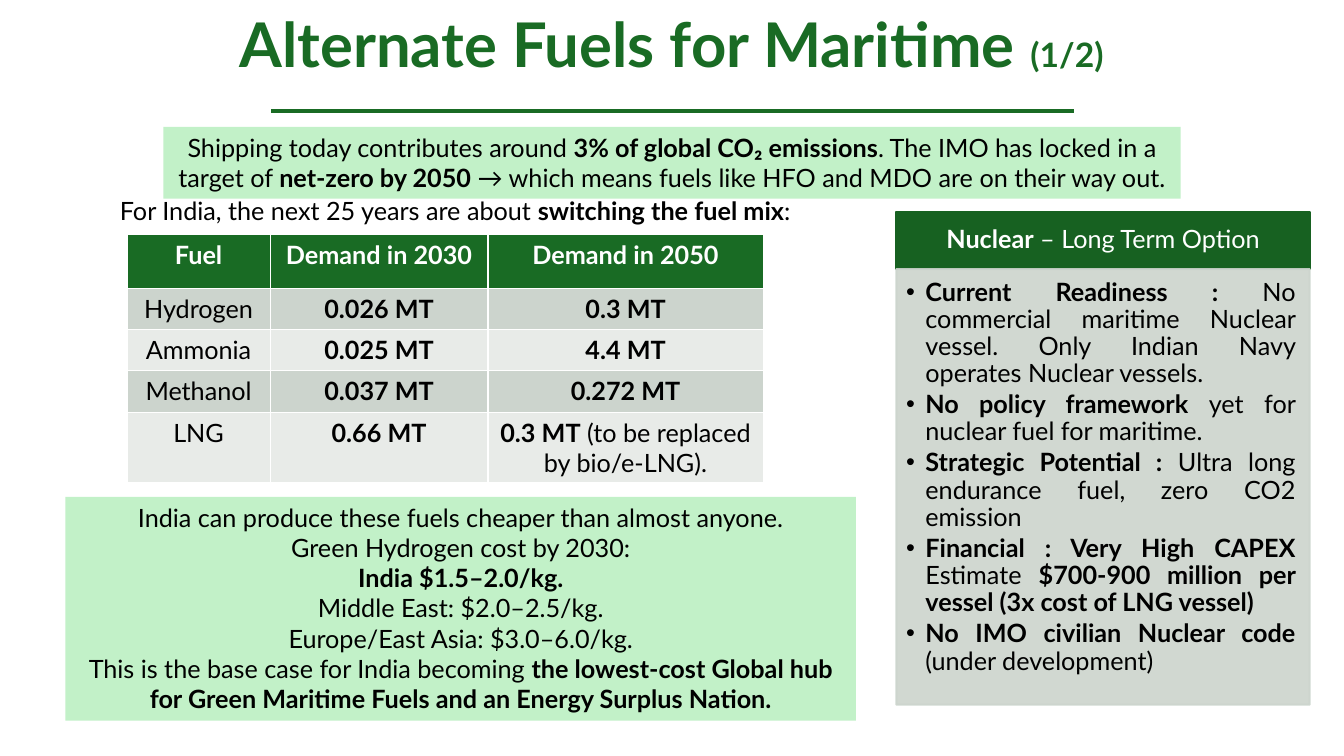
from lxml.etree import SubElement
from pptx import Presentation
from pptx.dml.color import RGBColor
from pptx.enum.shapes import MSO_CONNECTOR as Link, MSO_SHAPE as Shape
from pptx.enum.text import MSO_ANCHOR as Anchor, MSO_AUTO_SIZE as Fit, PP_ALIGN as Align
from pptx.oxml.ns import qn
from pptx.util import Inches, Pt

GREEN = RGBColor(0x19, 0x6B, 0x24)
DARK = RGBColor(0x17, 0x61, 0x21)
MINT = RGBColor(0xC2, 0xF1, 0xC8)
SAGE = RGBColor(0xCC, 0xD4, 0xCD)
PALE = RGBColor(0xE8, 0xEB, 0xE8)
WHITE = RGBColor(255, 255, 255)
BLACK = RGBColor(0, 0, 0)

TITLE = [("Alternate Fuels for Maritime ", 44), ("(1/2)", 24)]
INTRO = ["For India, the next 25 years are about *switching the fuel mix*:"]
BANNER = ["Shipping today contributes around *3% of global CO₂ emissions*. The IMO has locked "
          "in a target of *net-zero by 2050* → which means fuels like HFO and MDO are on their way out."]
FUELS = [
    ["*Fuel*", "*Demand in 2030*", "*Demand in 2050*"],
    ["Hydrogen", "*0.026 MT*", "*0.3 MT*"],
    ["Ammonia", "*0.025 MT*", "*4.4 MT*"],
    ["Methanol", "*0.037 MT*", "*0.272 MT*"],
    ["LNG", "*0.66 MT*", "*0.3 MT* (to be replaced by bio/e-LNG)."],
]
COLS = [1.42, 2.16, 2.73]
ROWS = [0.53, 0.41, 0.41, 0.41, 0.69]
COSTS = [
    "India can produce these fuels cheaper than almost anyone.",
    "Green Hydrogen cost by 2030:",
    "*India $1.5–2.0/kg.*",
    "Middle East: $2.0–2.5/kg.",
    "Europe/East Asia: $3.0–6.0/kg.\nThis is the base case for India becoming "
    "*the lowest-cost Global hub for Green Maritime Fuels and an Energy Surplus Nation.*",
]
HEAD = ["*Nuclear* – Long Term Option"]
POINTS = [
    "*Current Readiness : *No commercial maritime Nuclear vessel. Only Indian Navy operates Nuclear vessels.",
    "*No policy framework *yet for nuclear fuel for maritime.",
    "*Strategic Potential :* Ultra long endurance fuel, zero CO2 emission",
    "*Financial : Very High CAPEX* Estimate *$700-900 million per vessel (3x cost of LNG vessel)*",
    "*No IMO civilian Nuclear code* (under development)",
]

CENTER = {"alignment": Align.CENTER}
HEADING = {"alignment": Align.CENTER, "line_spacing": 0.9, "space_after": Pt(6.3)}
LIST = {"alignment": Align.JUSTIFY, "line_spacing": 0.9, "space_after": Pt(2.7)}


def assign(item, form):
    for name, value in form.items():
        setattr(item, name, value)


def style(run, size=18, color=BLACK, bold=False):
    assign(run.font, {"name": "Lato", "size": Pt(size), "bold": bold})
    run.font.color.rgb = color


def write(frame, lines, form, color=BLACK, indent=None, bullet=None):
    frame.word_wrap = True
    for i, line in enumerate(lines):
        para = frame.add_paragraph() if i else frame.paragraphs[0]
        assign(para, form)
        props = para._p.get_or_add_pPr()
        if indent:
            left, first = indent
            props.set("marL", str(Inches(left)))
            props.set("indent", str(Inches(first)))
        if bullet:
            SubElement(props, qn("a:buFont")).set("typeface", "Arial")
            SubElement(props, qn("a:buChar")).set("char", bullet)
        for j, part in enumerate(line.split("*")):
            for k, text in enumerate(part.split("\n")):
                if k:
                    para.add_line_break()
                if text:
                    run = para.add_run()
                    run.text = text
                    style(run, color=color, bold=j % 2 == 1)


def box(left, top, width, height, fill, edge=False):
    shape = slide.shapes.add_shape(Shape.RECTANGLE, *map(Inches, (left, top, width, height)))
    shape.shadow.inherit = False
    shape.fill.solid()
    shape.fill.fore_color.rgb = fill
    if edge:
        shape.line.color.rgb = fill
        shape.line.width = Pt(1.5)
    else:
        shape.line.fill.background()
    shape.text_frame.vertical_anchor = Anchor.TOP
    return shape


def inset(frame, left, top, right, bottom):
    assign(frame, {"margin_left": Inches(left), "margin_top": Inches(top),
                   "margin_right": Inches(right), "margin_bottom": Inches(bottom)})


deck = Presentation()
assign(deck, {"slide_width": Inches(13.33), "slide_height": Inches(7.5)})
slide = deck.slides.add_slide(deck.slide_layouts[5])

title = slide.shapes.title
assign(title, {"left": Inches(1.75), "top": Inches(0.07),
               "width": Inches(9.82), "height": Inches(0.81)})
assign(title.text_frame, {"vertical_anchor": Anchor.MIDDLE, "word_wrap": True,
                          "auto_size": Fit.NONE})
para = title.text_frame.paragraphs[0]
assign(para, {"alignment": Align.CENTER, "line_spacing": 0.9})
for text, size in TITLE:
    run = para.add_run()
    run.text = text
    style(run, size, GREEN, True)

rule = slide.shapes.add_connector(Link.STRAIGHT, Inches(2.69), Inches(1.1), Inches(10.65), Inches(1.1))
rule.line.color.rgb = GREEN
rule.line.width = Pt(3)
SubElement(rule._element.spPr, qn("a:effectLst"))

intro = slide.shapes.add_textbox(Inches(0.84), Inches(1.89), Inches(7.19), Inches(0.4))
write(intro.text_frame, INTRO, {}, indent=(0.5, -0.25))
write(box(1.62, 1.26, 10.09, 0.71, MINT).text_frame, BANNER, CENTER)

grid = slide.shapes.add_table(len(ROWS), len(COLS), Inches(1.26), Inches(2.33),
                              Inches(sum(COLS)), Inches(sum(ROWS))).table
for col, width in zip(grid.columns, COLS):
    col.width = Inches(width)
for r, (row, height) in enumerate(zip(FUELS, ROWS)):
    grid.rows[r].height = Inches(height)
    for c, text in enumerate(row):
        cell = grid.cell(r, c)
        cell.fill.solid()
        cell.fill.fore_color.rgb = (SAGE if r % 2 else PALE) if r else GREEN
        write(cell.text_frame, [text], CENTER, BLACK if r else WHITE)

write(box(0.65, 4.93, 7.84, 2.22, MINT).text_frame, COSTS, CENTER)

head = box(8.89, 2.1, 4.1, 0.57, DARK, True).text_frame
head.vertical_anchor = Anchor.MIDDLE
inset(head, 0.14, 0.08, 0.14, 0.08)
write(head, HEAD, HEADING, WHITE)

panel = box(8.89, 2.67, 4.1, 4.32, SAGE, True)
for tint in panel._element.spPr.iter(qn("a:srgbClr")):
    SubElement(tint, qn("a:alpha")).set("val", "90000")
inset(panel.text_frame, 0.1, 0.1, 0.14, 0.16)
write(panel.text_frame, POINTS, LIST, indent=(0.19, -0.19), bullet="•")

deck.save("out.pptx")
